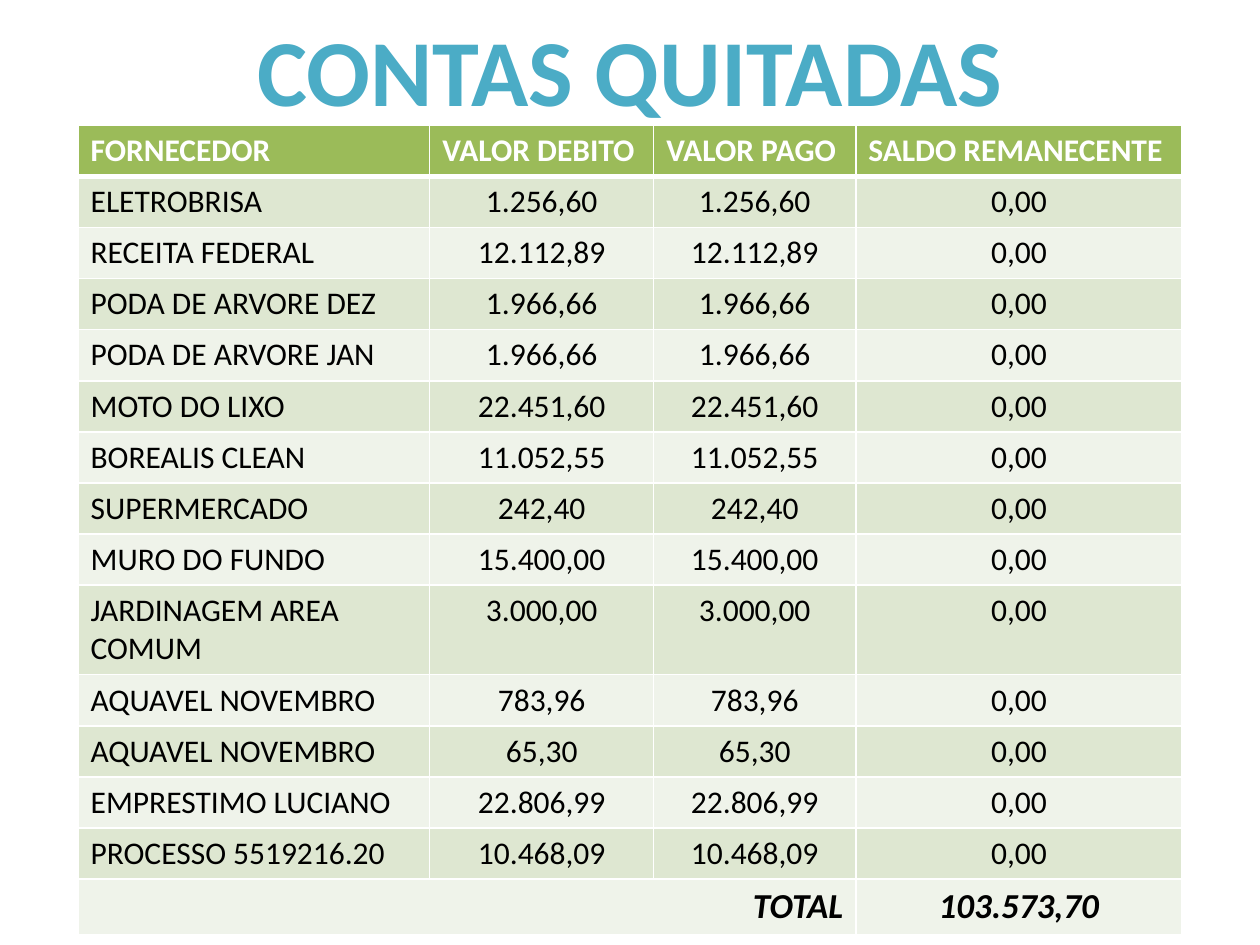
from pptx import Presentation
from pptx.dml.color import RGBColor
from pptx.enum.text import MSO_ANCHOR, MSO_AUTO_SIZE, PP_ALIGN as Align
from pptx.oxml.ns import qn
from pptx.util import Pt
from lxml.etree import SubElement


def color(hex_code):
    return RGBColor.from_string(hex_code)


def fill_cell(cell, text, fill, align=Align.LEFT, size=18, ink="000000",
              bold=False, italic=False, bottom=1):
    """Write one table cell with white borders."""
    props = cell._tc.get_or_add_tcPr()
    for side, width in (("lnL", 1), ("lnR", 1), ("lnT", 1), ("lnB", bottom)):
        line = SubElement(props, qn(f"a:{side}"), w=str(Pt(width)))
        SubElement(SubElement(line, qn("a:solidFill")), qn("a:srgbClr"), val="FFFFFF")
    cell.fill.solid()
    cell.fill.fore_color.rgb = color(fill)
    cell.text = text
    paragraph = cell.text_frame.paragraphs[0]
    paragraph.alignment = align
    font = paragraph.font
    font.name, font.size, font.bold, font.italic = "Calibri", Pt(size), bold, italic
    font.color.rgb = color(ink)


headings = ["FORNECEDOR", "VALOR DEBITO", "VALOR PAGO", "SALDO REMANECENTE"]
# Each bill was paid in full, so debt and payment are the same amount
bills = [
    ("ELETROBRISA", "1.256,60"),
    ("RECEITA FEDERAL", "12.112,89"),
    ("PODA DE ARVORE DEZ", "1.966,66"),
    ("PODA DE ARVORE JAN", "1.966,66"),
    ("MOTO DO LIXO", "22.451,60"),
    ("BOREALIS CLEAN", "11.052,55"),
    ("SUPERMERCADO", "242,40"),
    ("MURO DO FUNDO", "15.400,00"),
    ("JARDINAGEM AREA COMUM", "3.000,00"),
    ("AQUAVEL NOVEMBRO", "783,96"),
    ("AQUAVEL NOVEMBRO", "65,30"),
    ("EMPRESTIMO LUCIANO", "22.806,99"),
    ("PROCESSO 5519216.20", "10.468,09"),
]
band_fills = ["EFF3EA", "DEE7D1"]

deck = Presentation()
deck.slide_width, deck.slide_height = Pt(720), Pt(540)
slide = deck.slides.add_slide(deck.slide_layouts[5])

# Title
title = slide.shapes.title
title.left, title.top, title.width, title.height = Pt(137.5), Pt(3), Pt(445), Pt(72.7)
title.text = "CONTAS QUITADAS"
title_frame = title.text_frame
title_frame.word_wrap = False
title_frame.auto_size = MSO_AUTO_SIZE.NONE
title_frame.vertical_anchor = MSO_ANCHOR.TOP
heading = title_frame.paragraphs[0]
heading.alignment = Align.CENTER
heading.font.name, heading.font.size, heading.font.bold = "Calibri", Pt(54), True
heading.font.color.rgb = color("4BACC6")

# Table grid
row_height = 29.2
row_count = len(bills) + 2
accounts = slide.shapes.add_table(row_count, len(headings), Pt(44.6), Pt(71.6),
                                  Pt(631), Pt(row_height * row_count)).table
for column, width in zip(accounts.columns, (201, 128, 115.5, 186.5)):
    column.width = Pt(width)
for row in accounts.rows:
    row.height = Pt(row_height)

# Header row
for col, text in enumerate(headings):
    fill_cell(accounts.cell(0, col), text, "9BBB59", ink="FFFFFF", bold=True, bottom=3)

# Bills, in alternating bands
for row, (supplier, amount) in enumerate(bills, start=1):
    for col, text in enumerate((supplier, amount, amount, "0,00")):
        fill_cell(accounts.cell(row, col), text, band_fills[row % 2],
                  Align.CENTER if col else Align.LEFT)

# Total row
last = row_count - 1
accounts.cell(last, 0).merge(accounts.cell(last, 2))
for col, text, align in ((0, "TOTAL", Align.RIGHT), (3, "103.573,70", Align.CENTER)):
    fill_cell(accounts.cell(last, col), text, band_fills[last % 2], align,
              size=20, bold=True, italic=True)

deck.save("out.pptx")
